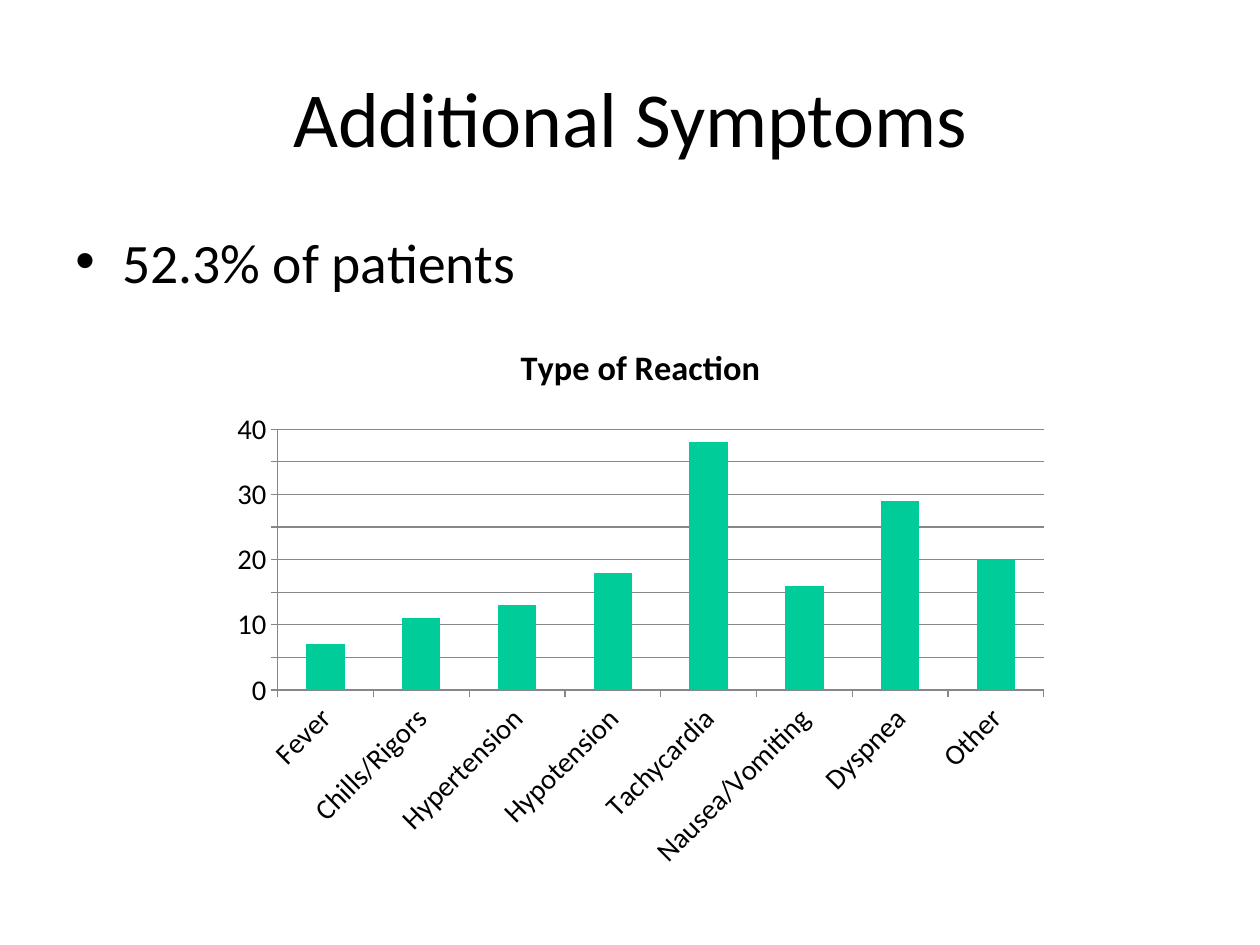
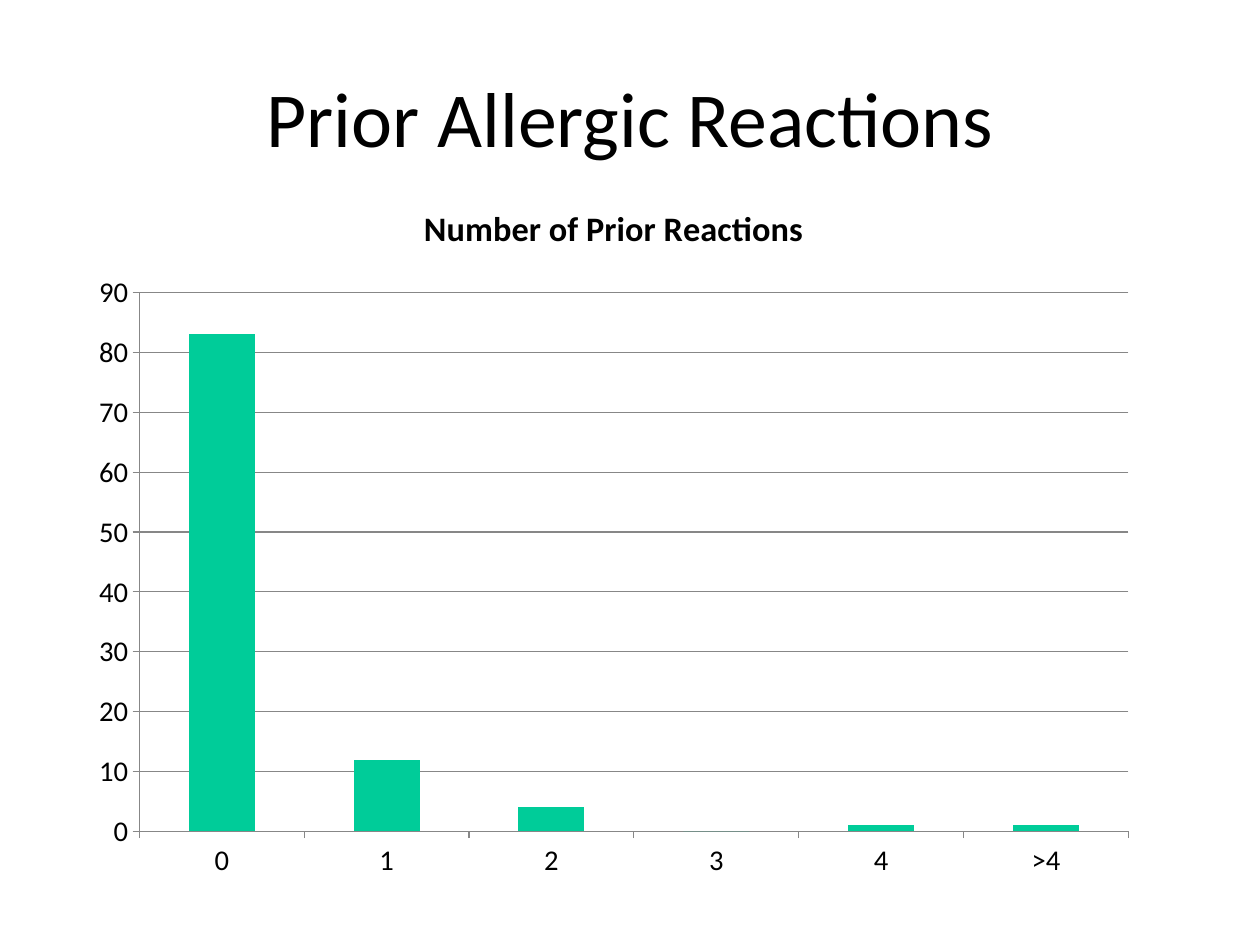
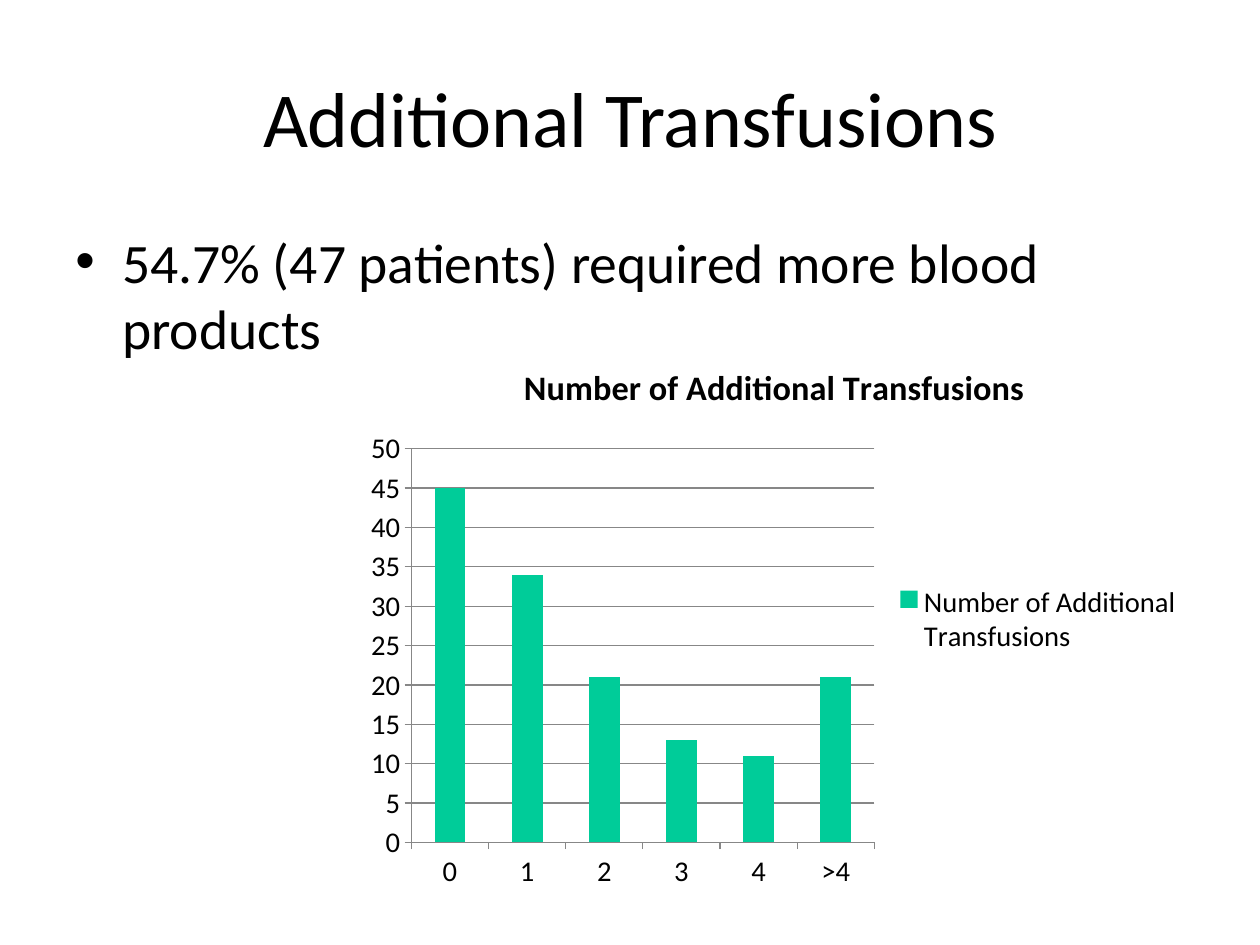
from pptx import Presentation
from pptx.chart.data import CategoryChartData
from pptx.dml.color import RGBColor
from pptx.enum.chart import XL_CHART_TYPE, XL_LEGEND_POSITION, XL_TICK_MARK
from pptx.enum.text import MSO_ANCHOR, MSO_AUTO_SIZE, PP_ALIGN
from pptx.util import Inches, Pt

COLUMNS = XL_CHART_TYPE.COLUMN_CLUSTERED
LEGEND_RIGHT = XL_LEGEND_POSITION.RIGHT
TICK_OUT, TICK_NONE = XL_TICK_MARK.OUTSIDE, XL_TICK_MARK.NONE
MIDDLE, TOP = MSO_ANCHOR.MIDDLE, MSO_ANCHOR.TOP
CENTER, LEFT = PP_ALIGN.CENTER, PP_ALIGN.LEFT
NO_AUTOFIT = MSO_AUTO_SIZE.NONE

FONT = "Calibri"
TEXT, BAR, GRID = "000000", "00CC99", "878787"
TITLE_ONLY, TITLE_AND_BODY = 5, 1
CM_PER_INCH = 2.54
COUNTS = ["0", "1", "2", "3", "4", ">4"]

SLIDES = [
    dict(title="Additional Symptoms", bullet="52.3% of patients",
         chart="Type of Reaction", box=(1.93, 2.8, 7.35, 4.9),
         cats=["Fever", "Chills/Rigors", "Hypertension", "Hypotension",
               "Tachycardia", "Nausea/Vomiting", "Dyspnea", "Other"],
         vals=[7, 11, 13, 18, 38, 16, 29, 20],
         top=40, step=5, rotation=-45, legend=False),
    dict(title="Prior Allergic Reactions", bullet=None,
         chart="Number of Prior Reactions", box=(0.68, 1.55, 9.38, 6.25),
         cats=COUNTS, vals=[83, 12, 4, 0, 1, 1],
         top=90, step=10, rotation=0, legend=False),
    dict(title="Additional Transfusions",
         bullet="54.7% (47 patients) required more blood products",
         chart="Number of Additional Transfusions", box=(3.1, 2.97, 7.35, 4.9),
         cats=COUNTS, vals=[45, 34, 21, 13, 11, 21],
         top=50, step=5, rotation=0, legend=True),
]


def style_font(font, size, bold=False):
    font.name = FONT
    font.size = Pt(size)
    font.bold = bold
    font.color.rgb = RGBColor.from_string(TEXT)


def fill_placeholder(sp, box, text, size, anchor, align):
    sp.left, sp.top, sp.width, sp.height = [Inches(v) for v in box]
    tf = sp.text_frame
    tf.auto_size = NO_AUTOFIT
    tf.word_wrap = True
    tf.vertical_anchor = anchor
    tf.margin_left = tf.margin_right = Inches(0.11)
    tf.margin_top = tf.margin_bottom = Inches(0.06)
    tf.text = text
    p = tf.paragraphs[0]
    p.alignment = align
    style_font(p.font, size)
    return p


prs = Presentation()
prs.slide_width = Inches(28 / CM_PER_INCH)
prs.slide_height = Inches(21 / CM_PER_INCH)

for item in SLIDES:
    layout = TITLE_AND_BODY if item["bullet"] else TITLE_ONLY
    s = prs.slides.add_slide(prs.slide_layouts[layout])
    fill_placeholder(s.shapes.title, (0.55, 0.32, 9.92, 1.39),
                     item["title"], 49, MIDDLE, CENTER)
    if item["bullet"]:
        p = fill_placeholder(s.placeholders[1], (0.55, 1.93, 9.92, 5.47),
                             item["bullet"], 35, TOP, LEFT)
        p.space_before = Pt(8.8)
        pPr = p._p.get_or_add_pPr()
        pPr.set("marL", str(Inches(0.41)))
        pPr.set("indent", str(Inches(-0.41)))

    data = CategoryChartData()
    data.categories = item["cats"]
    data.add_series(item["chart"], item["vals"])
    box = [Inches(v) for v in item["box"]]
    chart = s.shapes.add_chart(COLUMNS, *box, data).chart
    style_font(chart.font, 18)

    chart.has_title = True
    tf = chart.chart_title.text_frame
    tf.text = item["chart"]
    style_font(tf.paragraphs[0].font, 21.6, bold=True)
    chart.chart_title.include_in_layout = False

    chart.has_legend = item["legend"]
    if item["legend"]:
        chart.legend.position = LEGEND_RIGHT
        chart.legend.include_in_layout = False

    plot = chart.plots[0]
    plot.gap_width = 150
    plot.vary_by_categories = False
    fill = plot.series[0].format.fill
    fill.solid()
    fill.fore_color.rgb = RGBColor.from_string(BAR)

    cat_axis, val_axis = chart.category_axis, chart.value_axis
    val_axis.minimum_scale = 0
    val_axis.maximum_scale = item["top"]
    val_axis.major_unit = item["step"]
    val_axis.has_major_gridlines = True
    for axis in (cat_axis, val_axis):
        axis.major_tick_mark = TICK_OUT
        axis.minor_tick_mark = TICK_NONE
        style_font(axis.tick_labels.font, 18)
    for line in (cat_axis.format.line, val_axis.format.line,
                 val_axis.major_gridlines.format.line):
        line.color.rgb = RGBColor.from_string(GRID)
        line.width = Pt(0.75)
    if item["rotation"]:
        bodyPr = cat_axis._element.txPr.bodyPr
        bodyPr.set("rot", str(item["rotation"] * 60000))

prs.save("out.pptx")
